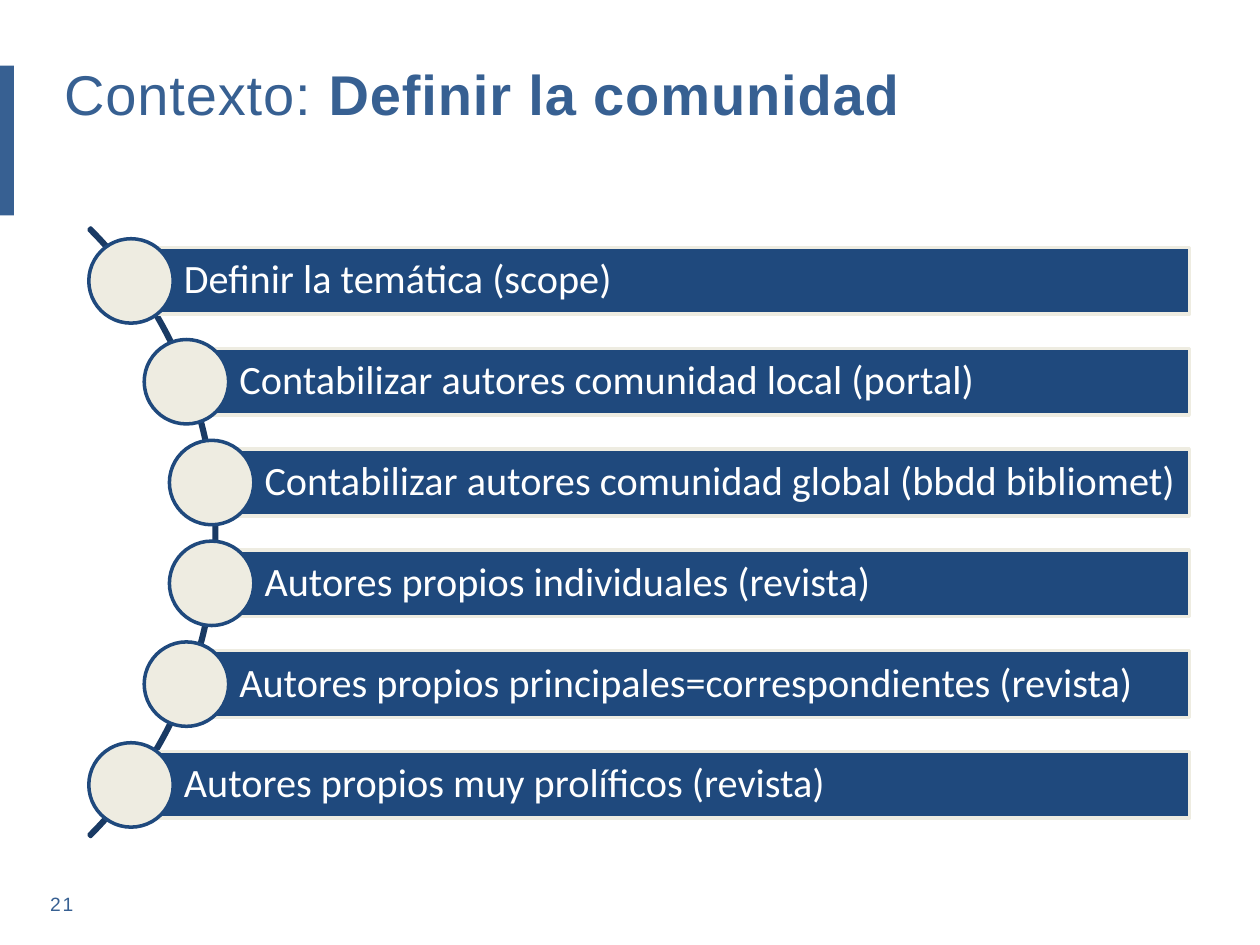
"""Build the slide on defining the community as a curved list of steps."""
from dataclasses import dataclass

from pptx import Presentation
from pptx import util as u
from pptx.dml.color import RGBColor
from pptx.enum import shapes, text


@dataclass(frozen=True)
class Theme:
    accent: str = "376092"
    navy: str = "1F497D"
    arc: str = "193A64"
    cream: str = "EEECE1"
    white: str = "FFFFFF"
    heading_font: str = "Arial"
    body_font: str = "Calibri"
    title_size: int = 32
    body_size: int = 23
    number_size: int = 11
    line_width: int = 2


@dataclass(frozen=True)
class Step:
    label: str
    axis: float


THEME = Theme()
STEPS = [
    Step("Definir la temática (scope)", 1.04),
    Step("Contabilizar autores comunidad local (portal)", 1.48),
    Step("Contabilizar autores comunidad global (bbdd bibliomet)", 1.68),
    Step("Autores propios individuales (revista)", 1.68),
    Step("Autores propios principales=correspondientes (revista)", 1.48),
    Step("Autores propios muy prolíficos (revista)", 1.04),
]
FIRST_CENTER, PITCH = 2.23, 0.8
BAR_RIGHT, BAR_HEIGHT, DOT = 9.44, 0.53, 0.67


def set_all(target, values: dict) -> None:
    for name, value in values.items():
        setattr(target, name, value)


def add_shape(s, kind, box: tuple, fill: str | None, line: str | None):
    sp = s.shapes.add_shape(kind, *map(u.Inches, box))
    sp.shadow.inherit = False
    if fill:
        sp.fill.solid()
        sp.fill.fore_color.rgb = RGBColor.from_string(fill)
    else:
        sp.fill.background()
    if line:
        sp.line.color.rgb = RGBColor.from_string(line)
        sp.line.width = u.Pt(THEME.line_width)
    else:
        sp.line.fill.background()
    return sp


def add_run(p, words: str, color: str, spacing: int = 0, **font) -> None:
    r = p.add_run()
    r.text = words
    set_all(r.font, font)
    r.font.color.rgb = RGBColor.from_string(color)
    if spacing:
        r.font._element.set("spc", str(spacing))


def add_text(s, box: tuple, runs: list[tuple[str, bool]], size: int, spacing: int) -> None:
    tf = s.shapes.add_textbox(*map(u.Inches, box)).text_frame
    tf.word_wrap = True
    for words, bold in runs:
        add_run(tf.paragraphs[0], words, THEME.accent, spacing,
                name=THEME.heading_font, size=u.Pt(size), bold=bold)


def add_step(s, step: Step, center: float) -> None:
    bar = add_shape(s, shapes.MSO_SHAPE.RECTANGLE,
                    (step.axis, center - BAR_HEIGHT / 2, BAR_RIGHT - step.axis, BAR_HEIGHT),
                    THEME.navy, THEME.cream)
    tf = bar.text_frame
    set_all(tf, {
        "word_wrap": True,
        "vertical_anchor": text.MSO_ANCHOR.MIDDLE,
        "margin_left": u.Inches(0.42),
        "margin_right": u.Inches(0.06),
        "margin_top": u.Inches(0.06),
        "margin_bottom": u.Inches(0.06),
    })
    p = tf.paragraphs[0]
    set_all(p, {"alignment": text.PP_ALIGN.LEFT, "line_spacing": 0.9})
    add_run(p, step.label, THEME.white, name=THEME.body_font, size=u.Pt(THEME.body_size))
    add_shape(s, shapes.MSO_SHAPE.OVAL,
              (step.axis - DOT / 2, center - DOT / 2, DOT, DOT), THEME.cream, THEME.navy)


def main() -> None:
    prs = Presentation()
    set_all(prs, {"slide_width": u.Inches(10), "slide_height": u.Inches(7.5)})
    s = prs.slides.add_slide(prs.slide_layouts[6])
    add_text(s, (0.3, 7.03, 9.25, 0.29), [("21", False)], THEME.number_size, 100)
    add_shape(s, shapes.MSO_SHAPE.RECTANGLE, (0, 0.52, 0.11, 1.19), THEME.accent, None)
    add_text(s, (0.41, 0.42, 9.01, 0.64),
             [("Contexto: ", False), ("Definir la comunidad", True)], THEME.title_size, 50)
    arc = add_shape(s, shapes.MSO_SHAPE.BLOCK_ARC, (-5.11, 0.81, 6.83, 6.83), None, THEME.arc)
    for i, value in enumerate((189, 27, 0.003)):
        arc.adjustments[i] = value
    for i, step in enumerate(STEPS):
        add_step(s, step, FIRST_CENTER + i * PITCH)
    prs.save("out.pptx")


if __name__ == "__main__":
    main()
